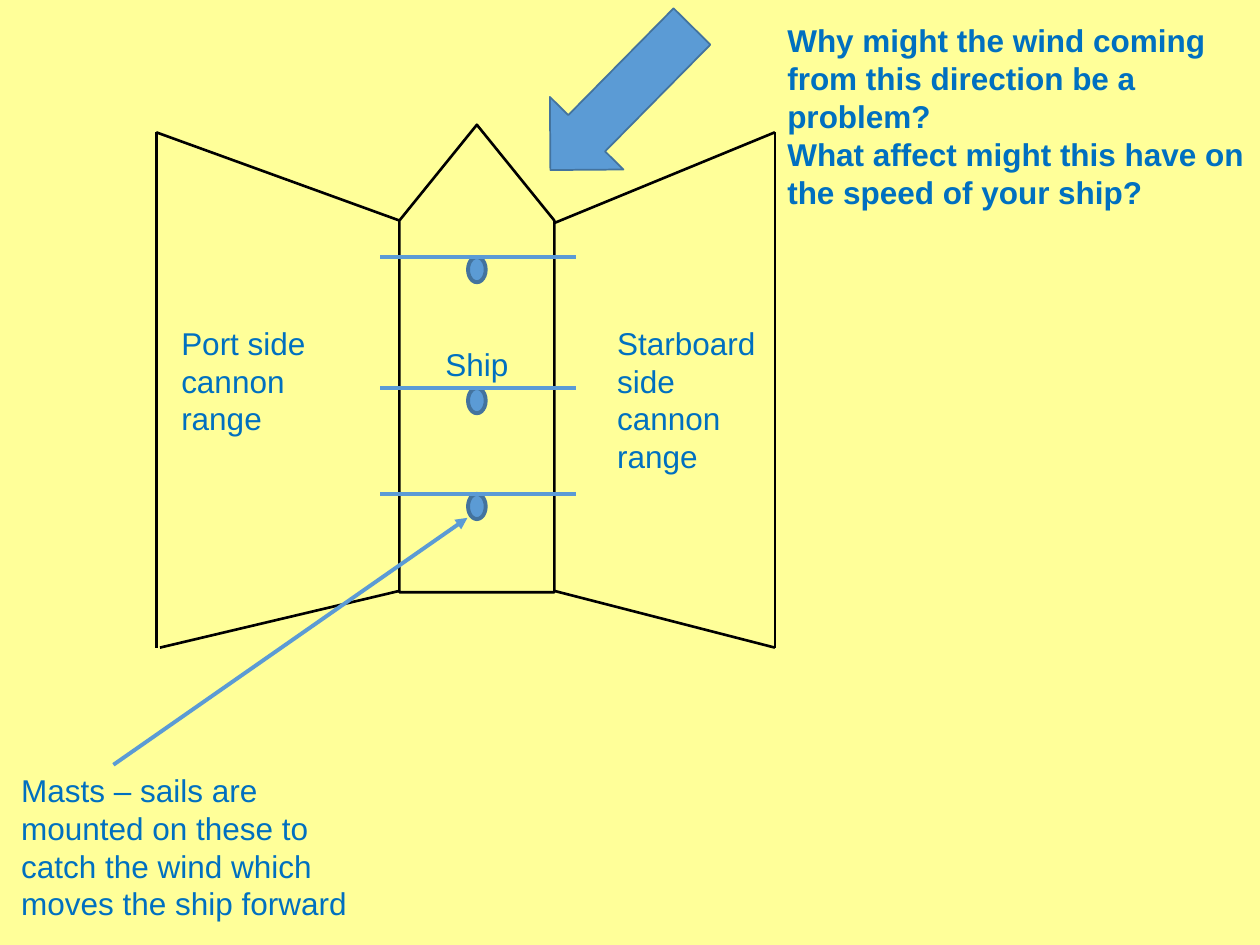
from lxml.etree import SubElement
from pptx import Presentation
from pptx.dml.color import RGBColor
from pptx.enum.shapes import MSO_CONNECTOR, MSO_SHAPE as Preset
from pptx.enum.text import MSO_AUTO_SIZE as AutoSize, PP_ALIGN as Align
from pptx.oxml.ns import qn
from pptx.util import Inches, Pt

COLORS = {
    "background": "FFFF99",
    "outline": "000000",
    "blue": "5B9BD5",
    "blue_edge": "43739E",
    "text": "0070C0",
}
COLORS = {name: RGBColor.from_string(value) for name, value in COLORS.items()}

# The grid has 100 columns and 75 rows of square cells
CELL = Inches(0.1)
COLUMNS, ROWS = 100, 75

presentation = Presentation()
presentation.slide_width = COLUMNS * CELL
presentation.slide_height = ROWS * CELL
slide = presentation.slides.add_slide(presentation.slide_layouts[6])
slide.background.fill.solid()
slide.background.fill.fore_color.rgb = COLORS["background"]


def add_line(start, end, color, width):
    """Draw a shadowless line between two (column, row) points."""
    points = [round(value * CELL) for value in (*start, *end)]
    line = slide.shapes.add_connector(MSO_CONNECTOR.STRAIGHT, *points)
    line.line.color.rgb = COLORS[color]
    line.line.width = Pt(width)
    SubElement(line._element.spPr, qn("a:effectLst"))
    return line


def add_preset(preset, box, fill, edge, width):
    """Draw a preset shape in a (column, row, columns, rows) box."""
    shape = slide.shapes.add_shape(preset, *[round(value * CELL) for value in box])
    shape.shadow.inherit = False
    if fill:
        shape.fill.solid()
        shape.fill.fore_color.rgb = COLORS[fill]
    else:
        shape.fill.background()
    shape.line.color.rgb = COLORS[edge]
    shape.line.width = Pt(width)
    return shape


# Ship: a pentagon turned to point up the slide
port, starboard, stern = 31.7, 44, 46.9
center = (port + starboard) / 2
beam, length = starboard - port, 37.1
ship = add_preset(
    Preset.PENTAGON,
    (center - length / 2, 28.45 - beam / 2, length, beam),
    None, "outline", 1.5,
)
ship.adjustments[0] = 0.618
ship.rotation = 270

# Cannon ranges
port_edge, starboard_edge, range_top, range_bottom = 12.4, 61.5, 10.5, 51.4
for start, end in [
    ((port, 17.5), (port_edge, range_top)),
    ((port, stern), (12.7, range_bottom)),
    ((starboard, 17.7), (starboard_edge, range_top)),
    ((starboard, stern), (starboard_edge, range_bottom)),
    ((starboard_edge, range_top), (starboard_edge, range_bottom)),
    ((port_edge, range_top), (port_edge, range_bottom)),
]:
    add_line(start, end, "outline", 1.5)

# Masts, each with its sail
mast_rows = [20.4, 30.8, 39.2]
for row in mast_rows:
    add_preset(Preset.OVAL, (center - 0.7, row, 1.4, 2), "blue", "blue_edge", 2.25)
for row in mast_rows:
    add_line((30.2, row), (45.7, row), "blue", 2.25)

pointer = add_line((9, 60.7), (37.1, 41.1), "blue", 2.25)
SubElement(pointer.line._get_or_add_ln(), qn("a:tailEnd"), type="triangle")

# Wind
wind = add_preset(Preset.RIGHT_ARROW, (41.3, 3.7, 16, 8.2), "blue", "blue_edge", 1)
wind.rotation = 134.6

# Labels: box, alignment, bold, paragraphs
labels = [
    ((48, 25.2, 13.6, 13.1), Align.LEFT, False, ["Starboard side cannon range"]),
    ((13.4, 25.2, 12.8, 10.1), Align.LEFT, False, ["Port side cannon range"]),
    ((33.5, 26.9, 8.7, 4), Align.CENTER, False, ["Ship"]),
    ((0.7, 60.7, 29.5, 13.1), Align.LEFT, False,
     ["Masts – sails are mounted on these to catch the wind which moves the ship forward"]),
    ((61.5, 1.2, 38.5, 16.2), Align.LEFT, True,
     ["Why might the wind coming from this direction be a problem?",
      "What affect might this have on the speed of your ship?"]),
]
for box, alignment, bold, texts in labels:
    text_box = slide.shapes.add_textbox(*[round(value * CELL) for value in box])
    frame = text_box.text_frame
    frame.word_wrap = True
    frame.auto_size = AutoSize.SHAPE_TO_FIT_TEXT
    for index, text in enumerate(texts):
        paragraph = frame.add_paragraph() if index else frame.paragraphs[0]
        paragraph.alignment = alignment
        run = paragraph.add_run()
        run.text = text
        run.font.name = "Arial"
        run.font.size = Pt(18)
        run.font.bold = bold
        run.font.color.rgb = COLORS["text"]

presentation.save("out.pptx")
